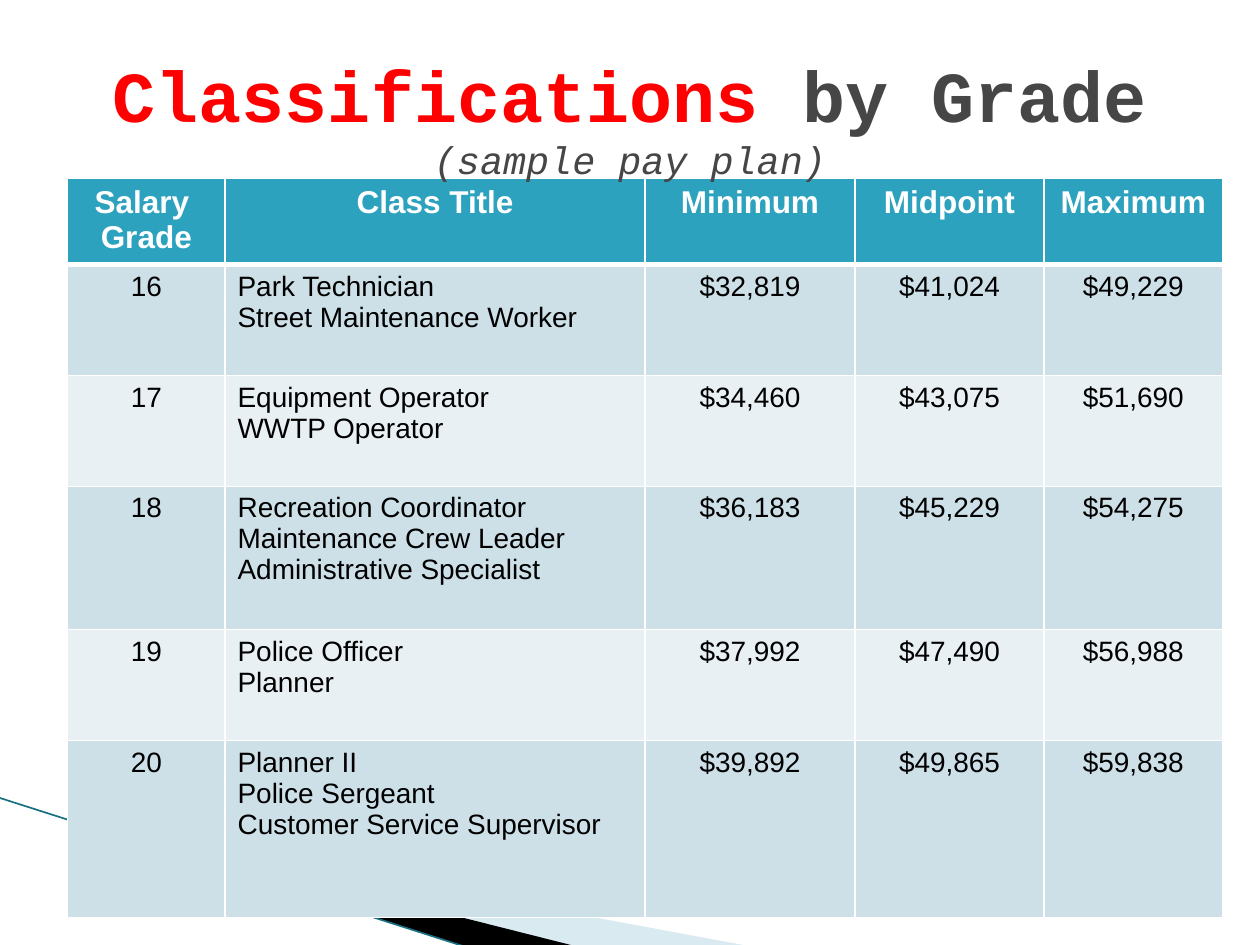
from pptx import Presentation
from pptx.dml.color import RGBColor
from pptx.enum.shapes import MSO_CONNECTOR
from pptx.enum.text import MSO_ANCHOR, MSO_AUTO_SIZE, PP_ALIGN
from pptx.oxml import parse_xml
from pptx.oxml.ns import nsdecls, qn
from pptx.util import Pt
from lxml import etree

STRAIGHT = MSO_CONNECTOR.STRAIGHT
MIDDLE = MSO_ANCHOR.MIDDLE
NO_FIT = MSO_AUTO_SIZE.NONE
LEFT, CENTER = PP_ALIGN.LEFT, PP_ALIGN.CENTER

WHITE = RGBColor(0xFF, 0xFF, 0xFF)
BLACK = RGBColor(0x00, 0x00, 0x00)
RED = RGBColor(0xFF, 0x00, 0x00)
GRAY = RGBColor(0x46, 0x46, 0x46)
TEAL = RGBColor(0x2D, 0xA2, 0xBF)
DARK_TEAL = RGBColor(0x18, 0x70, 0x82)
PALE_BLUE = RGBColor(0xA0, 0xCB, 0xDC)
BANDS = (RGBColor(0xCD, 0xE0, 0xE8), RGBColor(0xE8, 0xF0, 0xF4))

TITLE_FONT, TABLE_FONT = "Courier New", "Arial"
COLUMN_WIDTHS = (90, 240, 120, 108, 102)
ROW_HEIGHTS = (49.3, 63.3, 63.3, 82, 63.3, 101)
HEADER = (("Salary ", "Grade"), ("Class Title",), ("Minimum",), ("Midpoint",), ("Maximum",))
GRADES = (
    ("16", ("Park Technician", "Street Maintenance Worker"),
     "$32,819", "$41,024", "$49,229"),
    ("17", ("Equipment Operator", "WWTP Operator"),
     "$34,460", "$43,075", "$51,690"),
    ("18", ("Recreation Coordinator", "Maintenance Crew Leader", "Administrative Specialist"),
     "$36,183", "$45,229", "$54,275"),
    ("19", ("Police Officer", "Planner"),
     "$37,992", "$47,490", "$56,988"),
    ("20", ("Planner II", "Police Sergeant", "Customer Service Supervisor"),
     "$39,892", "$49,865", "$59,838"),
)


class SlideBuilder:
    def __init__(self, slide):
        self.slide = slide
        self.shapes = slide.shapes

    def span(self, para, text, font, size, color, bold=False, italic=False):
        span = para.add_run()
        span.text = text
        span.font.name = font
        span.font.size = Pt(size)
        span.font.color.rgb = color
        span.font.bold = bold
        span.font.italic = italic

    def title(self, left, top, width, height):
        box = self.shapes.title
        box.left, box.top, box.width, box.height = Pt(left), Pt(top), Pt(width), Pt(height)
        frame = box.text_frame
        frame.word_wrap = True
        frame.auto_size = NO_FIT
        frame.vertical_anchor = MIDDLE
        para = frame.paragraphs[0]
        para.alignment = CENTER
        self.span(para, "Classifications", TITLE_FONT, 41, RED, bold=True)
        self.span(para, " by Grade", TITLE_FONT, 41, GRAY, bold=True)
        para.add_line_break()
        self.span(para, "(sample pay plan)", TITLE_FONT, 22, GRAY, italic=True)
        # The title lies over the top edge of the table.
        box.element.getparent().append(box.element)

    def polygon(self, frame, points, color, opacity=None):
        """Draw slide points in a shape whose frame need not enclose them."""
        (x, y), *others = points
        builder = self.shapes.build_freeform(Pt(x), Pt(y))
        builder.add_line_segments([(Pt(x), Pt(y)) for x, y in others])
        shape = builder.convert_to_shape()
        left, top, width, height = map(Pt, frame)
        outline = next(shape.element.iter(qn("a:path")))
        outline.set("w", str(width))
        outline.set("h", str(height))
        for point in outline.iter(qn("a:pt")):
            point.set("x", str(int(point.get("x")) + shape.left - left))
            point.set("y", str(int(point.get("y")) + shape.top - top))
        shape.left, shape.top, shape.width, shape.height = left, top, width, height
        shape.shadow.inherit = False
        shape.fill.solid()
        shape.fill.fore_color.rgb = color
        shape.line.fill.background()
        if opacity is not None:
            tone = shape.element.spPr.find(qn("a:solidFill"))[0]
            etree.SubElement(tone, qn("a:alpha")).set("val", str(opacity * 1000))

    def line(self, x1, y1, x2, y2, color, width):
        line = self.shapes.add_connector(STRAIGHT, Pt(x1), Pt(y1), Pt(x2), Pt(y2))
        line.line.color.rgb = color
        line.line.width = Pt(width)
        etree.SubElement(line.element.spPr, qn("a:effectLst"))

    def table(self, left, top, rows):
        frame = self.shapes.add_table(len(rows), len(COLUMN_WIDTHS), Pt(left), Pt(top),
                                      Pt(sum(COLUMN_WIDTHS)), Pt(sum(ROW_HEIGHTS)))
        table = frame.table
        for column, width in zip(table.columns, COLUMN_WIDTHS):
            column.width = Pt(width)
        for row, height in zip(table.rows, ROW_HEIGHTS):
            row.height = Pt(height)
        for r, row in enumerate(rows):
            for c, content in enumerate(row):
                lines = (content,) if isinstance(content, str) else content
                self.cell(table.cell(r, c), lines, r, c)

    def cell(self, cell, lines, row, column):
        is_header = row == 0
        cell.fill.solid()
        cell.fill.fore_color.rgb = TEAL if is_header else BANDS[(row - 1) % 2]
        self.borders(cell, top=3 if row == 1 else 1, bottom=3 if is_header else 1)
        frame = cell.text_frame
        for index, text in enumerate(lines):
            para = frame.add_paragraph() if index else frame.paragraphs[0]
            para.alignment = LEFT if column == 1 and not is_header else CENTER
            self.span(para, text, TABLE_FONT, 18 if is_header else 16,
                      WHITE if is_header else BLACK, bold=is_header)

    def borders(self, cell, top, bottom):
        properties = cell._tc.get_or_add_tcPr()
        sides = (("lnL", 1), ("lnR", 1), ("lnT", top), ("lnB", bottom))
        for index, (side, width) in enumerate(sides):
            properties.insert(index, parse_xml(
                f'<a:{side} {nsdecls("a")} w="{Pt(width)}"><a:solidFill>'
                f'<a:srgbClr val="{WHITE}"/></a:solidFill></a:{side}>'))


def main():
    deck = Presentation()
    deck.slide_width, deck.slide_height = Pt(720), Pt(540)
    page = SlideBuilder(deck.slides.add_slide(deck.slide_layouts[5]))
    page.polygon((56.2, 393.8, 299.5, 113.8),
                 [(39.6, 468.5), (428.4, 540.7), (328.3, 540.7), (39.6, 468)], PALE_BLUE, 40)
    page.polygon((-4.3, 455.8, 299.5, 66.2),
                 [(38.2, 467.3), (329, 540.7), (267.8, 541.4), (38.9, 468)], BLACK)
    page.line(-0.7, 455.8, 267.1, 541.4, DARK_TEAL, 0.95)
    page.table(38.6, 102, (HEADER, *GRADES))
    page.title(36, 21.6, 648, 90)
    deck.save("out.pptx")


if __name__ == "__main__":
    main()
